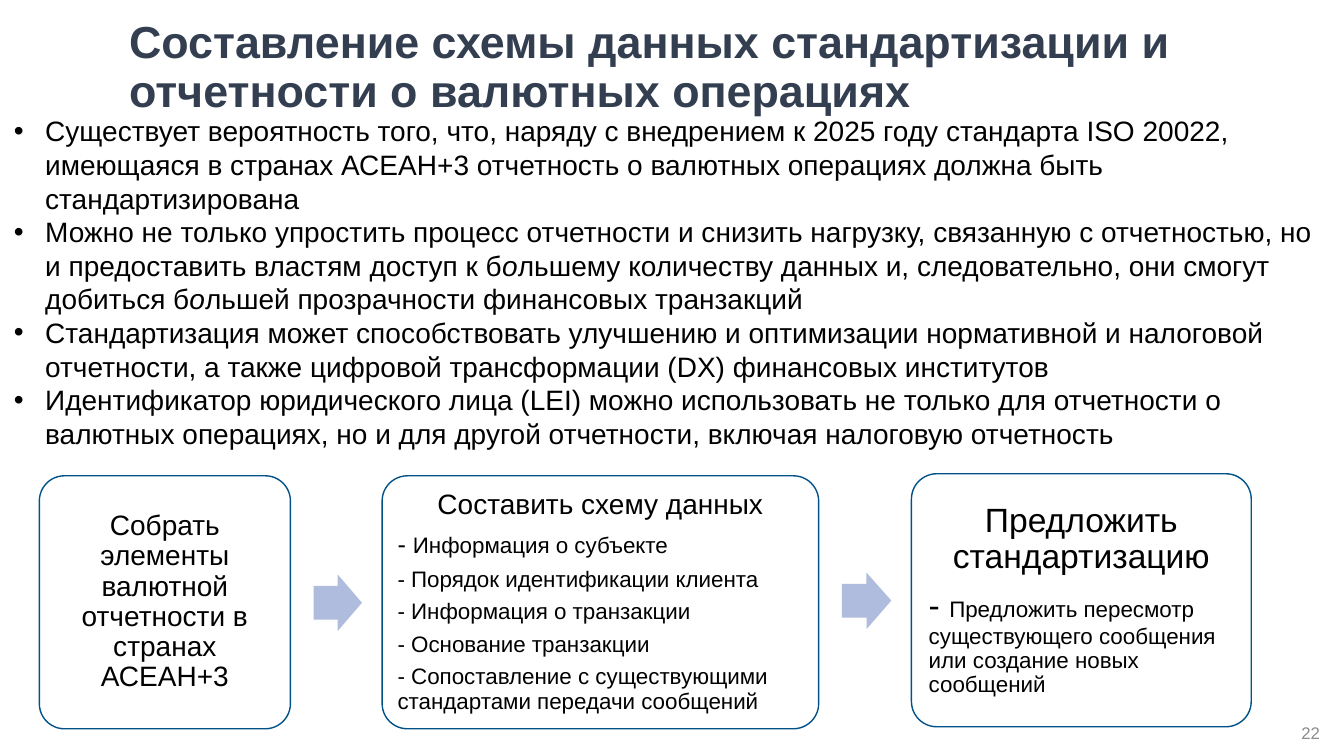
import pptx
import pptx.util
import pptx.dml.color
import pptx.enum.shapes
import pptx.enum.text
import pptx.oxml.ns
import lxml.etree

Inches, Pt = pptx.util.Inches, pptx.util.Pt
MSO_SHAPE = pptx.enum.shapes.MSO_SHAPE
PP_ALIGN = pptx.enum.text.PP_ALIGN
MIDDLE = pptx.enum.text.MSO_ANCHOR.MIDDLE
COLORS = {"title": "333F50", "text": "000000", "number": "8C8C8C",
          "outline": "005288", "arrow": "B0BCDE"}


def rgb(name):
    return pptx.dml.color.RGBColor.from_string(COLORS[name])


def write(p, *runs, size=20, color="text", bold=False, align=PP_ALIGN.LEFT,
          spacing=1.0, after=0, bullet=False):
    """Fill a paragraph with runs: text, or (text, run format) pairs."""
    p.alignment, p.line_spacing, p.space_after = align, spacing, Pt(after)
    p.space_before = Pt(0)
    if bullet:
        pPr = p._p.get_or_add_pPr()
        pPr.set("marL", str(Inches(0.31)))
        pPr.set("indent", str(-Inches(0.31)))
        for tag, key, value in (("a:buFont", "typeface", "Arial"), ("a:buChar", "char", "•")):
            lxml.etree.SubElement(pPr, pptx.oxml.ns.qn(tag)).set(key, value)
    for run in runs:
        text, fmt = (run, {}) if isinstance(run, str) else run
        r = p.add_run()
        r.text = text
        r.font.name = "Arial"
        r.font.size = Pt(fmt.get("size", size))
        r.font.bold = bold
        r.font.italic = fmt.get("italic", False)
        r.font.color.rgb = rgb(color)


prs = pptx.Presentation()
prs.slide_width, prs.slide_height = Inches(13.33), Inches(7.5)
s = prs.slides.add_slide(prs.slide_layouts[5])

# Title
title = s.shapes.title
title.left, title.top, title.width, title.height = map(Inches, (1.18, 0.08, 11.29, 1.2))
tf = title.text_frame
tf.auto_size = pptx.enum.text.MSO_AUTO_SIZE.NONE
tf.vertical_anchor = MIDDLE
write(tf.paragraphs[0],
      "Составление схемы данных стандартизации и отчетности о валютных операциях",
      size=32, color="title", bold=True, spacing=0.9)

# Slide number
tf = s.shapes.add_textbox(*map(Inches, (10.19, 7.07, 3, 0.4))).text_frame
tf.word_wrap, tf.vertical_anchor = True, MIDDLE
write(tf.paragraphs[0], "22", size=12, color="number", align=PP_ALIGN.RIGHT)

# Process steps: left, top, width, inset, heading, heading size, items
steps = [
    (0.39, 4.72, 2.49, 0.08, "Собрать элементы валютной отчетности в странах АСЕАН+3", 20, []),
    (3.79, 4.72, 4.33, 0.08, "Составить схему данных", 20, [
        [("- ", {"size": 18}), "Информация о субъекте"],
        ["- Порядок идентификации клиента"],
        ["- Информация о транзакции"],
        ["- Основание транзакции"],
        ["- Сопоставление с существующими стандартами передачи сообщений"]]),
    (9.04, 4.7, 3.37, 0.1, "Предложить стандартизацию", 24, [
        [("- ", {"size": 24}),
         "Предложить пересмотр существующего сообщения или создание новых сообщений"]]),
]
for left, top, width, inset, heading, size, items in steps:
    sp = s.shapes.add_shape(MSO_SHAPE.ROUNDED_RECTANGLE,
                            *map(Inches, (left, top, width, 2.51)))
    sp.adjustments[0] = 0.1
    sp.shadow.inherit = False
    sp.fill.background()
    sp.line.color.rgb, sp.line.width = rgb("outline"), Pt(1)
    tf = sp.text_frame
    tf.word_wrap, tf.vertical_anchor = True, MIDDLE
    tf.margin_left = tf.margin_right = tf.margin_top = tf.margin_bottom = Inches(inset)
    write(tf.paragraphs[0], heading, size=size, align=PP_ALIGN.CENTER,
          spacing=0.9, after=round(size * 0.38))
    for item in items:
        write(tf.add_paragraph(), *item, size=16, spacing=0.9, after=6)

# Arrows between the steps
for left, top, width, turn in ((3.11, 5.7, 0.48, 0), (8.35, 5.68, 0.49, 359.7)):
    sp = s.shapes.add_shape(MSO_SHAPE.RIGHT_ARROW, *map(Inches, (left, top, width, 0.56)))
    sp.adjustments[0], sp.adjustments[1] = 0.6, 0.5
    sp.rotation = turn
    sp.shadow.inherit = False
    sp.fill.solid()
    sp.fill.fore_color.rgb = rgb("arrow")
    sp.line.fill.background()

# Bullets
stressed = ("о", {"italic": True})
bullets = [
    ["Существует вероятность того, что, наряду с внедрением к 2025 году стандарта ISO 20022, "
     "имеющаяся в странах АСЕАН+3 отчетность о валютных операциях должна быть стандартизирована"],
    ["Можно не только упростить процесс отчетности и снизить нагрузку, связанную с отчетностью, "
     "но и предоставить властям доступ к б", stressed,
     "льшему количеству данных и, следовательно, они смогут добиться б", stressed,
     "льшей прозрачности финансовых транзакций"],
    ["Стандартизация может способствовать улучшению и оптимизации нормативной и налоговой "
     "отчетности, а также цифровой трансформации (DX) финансовых институтов"],
    ["Идентификатор юридического лица (LEI) можно использовать не только для отчетности о "
     "валютных операциях, но и для другой отчетности, включая налоговую отчетность"],
]
tf = s.shapes.add_textbox(*map(Inches, (0.04, 1.08, 13.3, 3.47))).text_frame
tf.word_wrap = True
for i, runs in enumerate(bullets):
    write(tf.add_paragraph() if i else tf.paragraphs[0], *runs, bullet=True)

prs.save("out.pptx")
